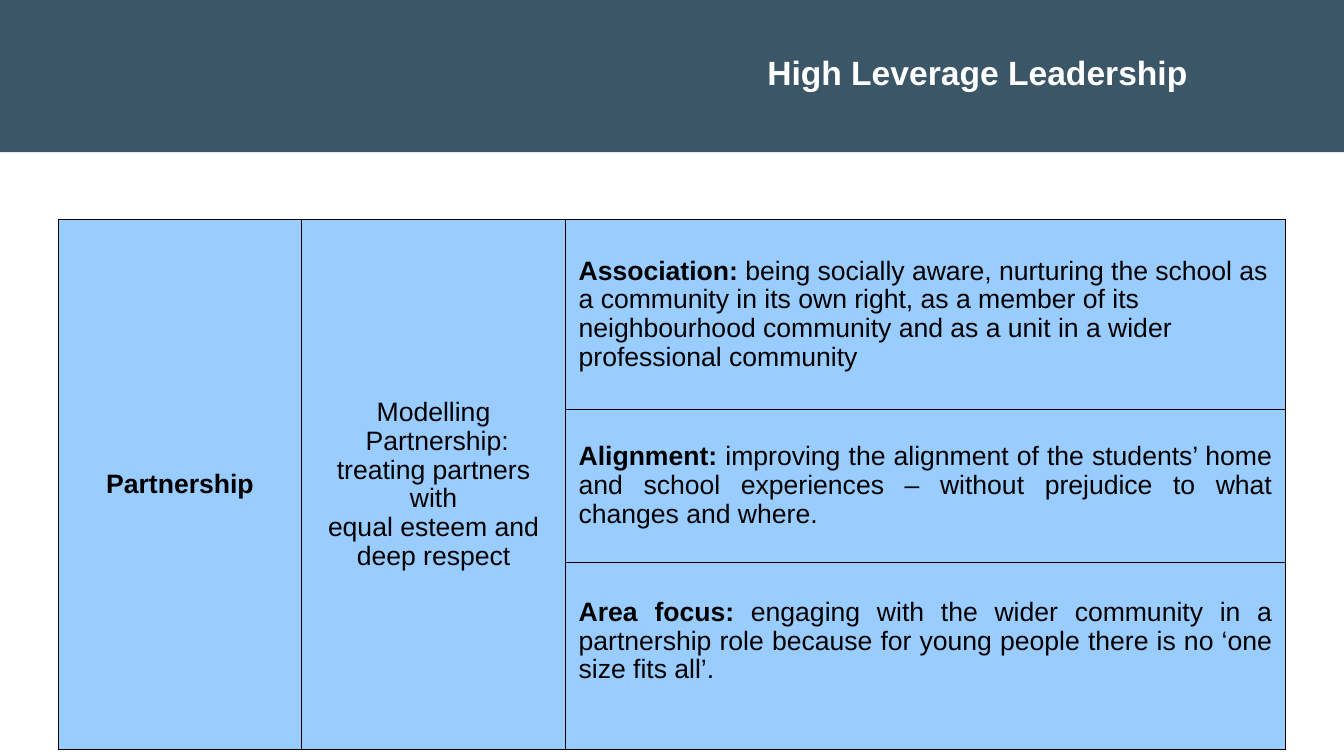
from lxml import etree
from pptx import Presentation
from pptx import util as u
from pptx.dml.color import RGBColor
from pptx.enum import shapes, text
from pptx.oxml import ns

COLORS = {"band": "3A5667", "cell": "99CCFF", "ink": "000000", "white": "FFFFFF"}
CENTER, LEFT, JUSTIFY = text.PP_ALIGN.CENTER, text.PP_ALIGN.LEFT, text.PP_ALIGN.JUSTIFY
COL_WIDTHS = (2.41, 2.62, 7.14)
ROW_HEIGHTS = (1.88, 1.52, 1.86)
MODELLING = ("Modelling", " Partnership:", "treating partners with",
             "equal esteem and deep respect")
PRACTICES = (
    ("Association:", " being socially aware, nurturing the school as a community in its "
     "own right, as a member of its neighbourhood community and as a unit in a wider "
     "professional community", LEFT, 0.05),
    ("Alignment:", " improving the alignment of the students’ home and school experiences "
     "– without prejudice to what changes and where.", JUSTIFY, 0.05),
    ("Area focus:", " engaging with the wider community in a partnership role because for "
     "young people there is no ‘one size fits all’.", JUSTIFY, 0.34),
)


def rgb(name):
    """Return the named palette colour."""
    return RGBColor.from_string(COLORS[name])


def add_run(p, words, size, color, bold):
    """Append a formatted Arial run to a paragraph."""
    r = p.add_run()
    r.text = words
    for key, value in {"name": "Arial", "size": u.Pt(size), "bold": bold}.items():
        setattr(r.font, key, value)
    r.font.color.rgb = rgb(color)


def add_borders(cell):
    """Draw a thin line on each side of a cell."""
    props = cell._tc.get_or_add_tcPr()
    for i, side in enumerate(("lnL", "lnR", "lnT", "lnB")):
        line = etree.Element(ns.qn(f"a:{side}"), w=str(u.Pt(1)))
        fill = etree.SubElement(line, ns.qn("a:solidFill"))
        etree.SubElement(fill, ns.qn("a:srgbClr"), val=COLORS["ink"])
        props.insert(i, line)


def fill_cell(cell, paragraphs, align, bottom=0.05):
    """Write paragraphs of (words, bold) runs into a cell."""
    margins = {"margin_left": 0.13, "margin_right": 0.13,
               "margin_top": 0.05, "margin_bottom": bottom}
    for key, value in margins.items():
        setattr(cell, key, u.Inches(value))
    cell.vertical_anchor = text.MSO_ANCHOR.MIDDLE
    tf = cell.text_frame
    for i, runs in enumerate(paragraphs):
        p = tf.add_paragraph() if i else tf.paragraphs[0]
        p.alignment = align
        p.line_spacing = 0.97
        for words, bold in runs:
            add_run(p, words, 19, "ink", bold)


def add_header(s, left, top, width, height):
    """Place the band and the title inside it."""
    band = s.shapes.add_shape(shapes.MSO_SHAPE.RECTANGLE, u.Inches(left), u.Inches(top),
                              u.Inches(width), u.Inches(height))
    band.shadow.inherit = False
    band.fill.solid()
    band.fill.fore_color.rgb = rgb("band")
    band.line.fill.background()
    title = s.shapes.title
    title.element.addprevious(band.element)
    box = {"left": left + 7.51, "top": top + 0.46, "width": 4.41, "height": 0.5}
    for key, value in box.items():
        setattr(title, key, u.Inches(value))
    tf = title.text_frame
    frame = {"word_wrap": False, "auto_size": text.MSO_AUTO_SIZE.NONE,
             "vertical_anchor": text.MSO_ANCHOR.MIDDLE}
    for key, value in frame.items():
        setattr(tf, key, value)
    p = tf.paragraphs[0]
    p.alignment = LEFT
    add_run(p, "High Leverage Leadership", 24, "white", True)


def add_partnership_table(s, left, top):
    """Place the partnership table with its top left corner at the given point."""
    frame = s.shapes.add_table(len(ROW_HEIGHTS), len(COL_WIDTHS), u.Inches(left),
                               u.Inches(top), u.Inches(sum(COL_WIDTHS)),
                               u.Inches(sum(ROW_HEIGHTS)))
    table = frame.table
    table.first_row = table.horz_banding = False
    for column, width in zip(table.columns, COL_WIDTHS):
        column.width = u.Inches(width)
    for row, height in zip(table.rows, ROW_HEIGHTS):
        row.height = u.Inches(height)
    for cell in table.iter_cells():
        cell.fill.solid()
        cell.fill.fore_color.rgb = rgb("cell")
        add_borders(cell)
    for column in (0, 1):
        table.cell(0, column).merge(table.cell(len(ROW_HEIGHTS) - 1, column))
    fill_cell(table.cell(0, 0), [[("Partnership", True)]], CENTER)
    fill_cell(table.cell(0, 1), [[(line, False)] for line in MODELLING], CENTER)
    for i, (name, meaning, align, bottom) in enumerate(PRACTICES):
        fill_cell(table.cell(i, 2), [[(name, True), (meaning, False)]], align, bottom)


def main():
    """Build and save the slide."""
    prs = Presentation()
    prs.slide_width, prs.slide_height = u.Inches(13.33), u.Inches(7.5)
    s = prs.slides.add_slide(prs.slide_layouts[5])
    add_header(s, 0, 0, 13.33, 1.51)
    add_partnership_table(s, 0.58, 2.18)
    prs.save("out.pptx")


if __name__ == "__main__":
    main()
